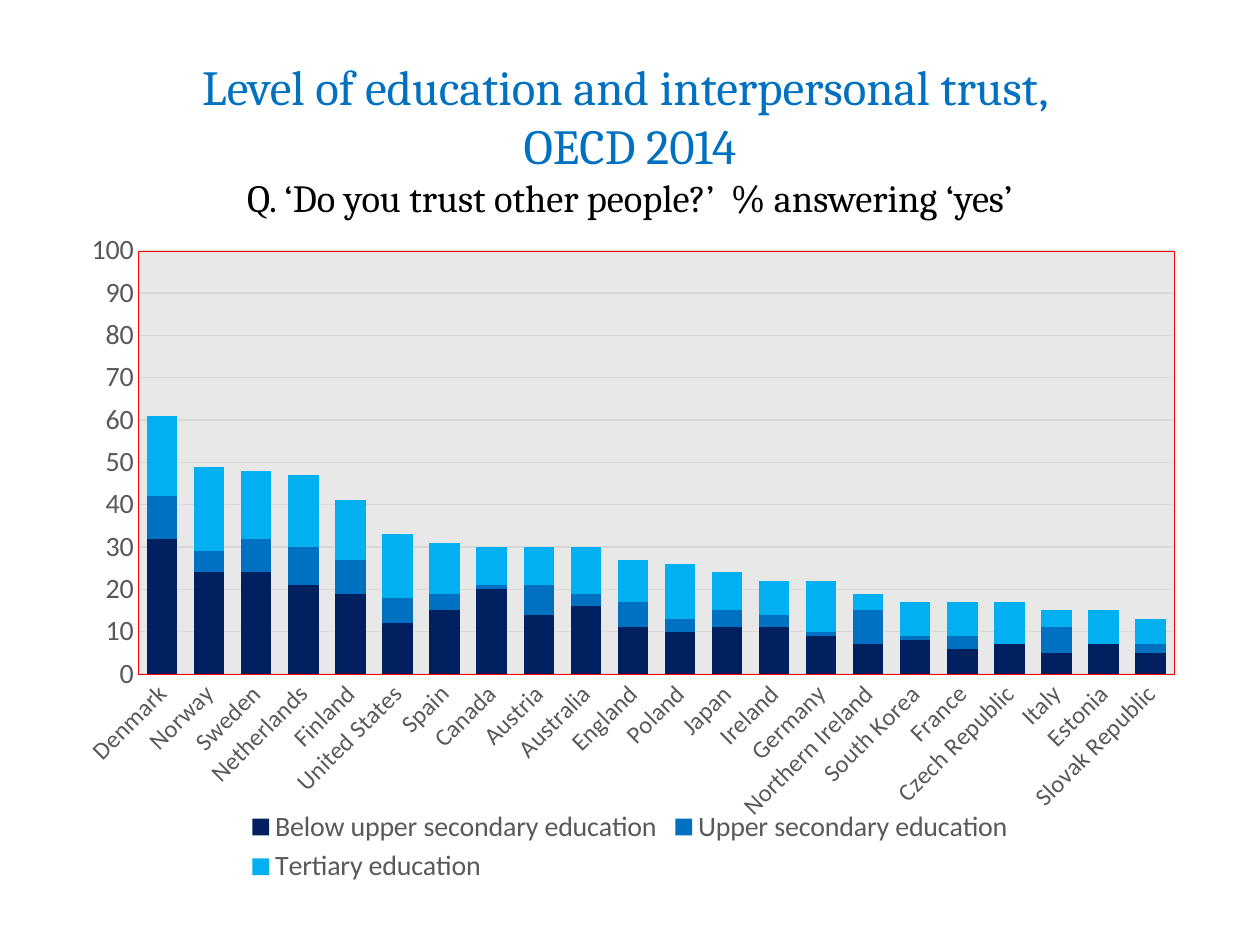
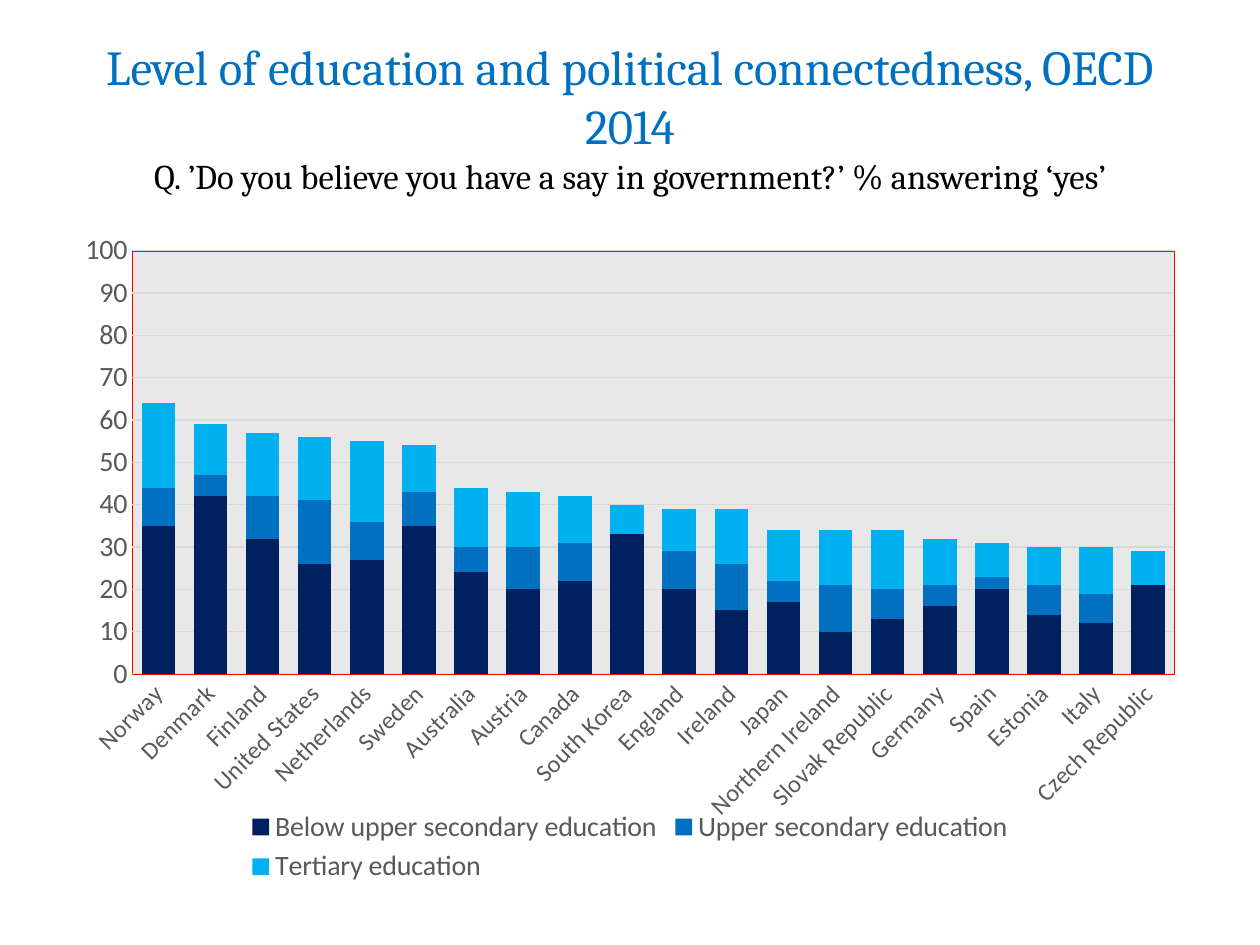
from lxml import etree
from pptx import Presentation
from pptx.chart.data import CategoryChartData
from pptx.dml.color import RGBColor
from pptx.enum import chart as charts, text
from pptx.oxml import parse_xml
from pptx.oxml.ns import nsdecls, qn
from pptx.util import Inches, Pt

TITLE_FONT, CHART_FONT = "Cambria", "Calibri"
TITLE_COLOR, QUESTION_COLOR = "0070C0", "000000"
LABEL_COLOR, GRID_COLOR, BORDER_COLOR = "595959", "D9D9D9", "FF0000"

EDUCATION_LEVELS = [
    ("Below upper secondary education", "002060"),
    ("Upper secondary education", "0070C0"),
    ("Tertiary education", "00B0F0"),
]

# Each row holds a country and one value per education level.
TRUST = [
    ("Denmark", 32, 10, 19), ("Norway", 24, 5, 20), ("Sweden", 24, 8, 16),
    ("Netherlands", 21, 9, 17), ("Finland", 19, 8, 14),
    ("United States", 12, 6, 15), ("Spain", 15, 4, 12), ("Canada", 20, 1, 9),
    ("Austria", 14, 7, 9), ("Australia", 16, 3, 11), ("England", 11, 6, 10),
    ("Poland", 10, 3, 13), ("Japan", 11, 4, 9), ("Ireland", 11, 3, 8),
    ("Germany", 9, 1, 12), ("Northern Ireland", 7, 8, 4),
    ("South Korea", 8, 1, 8), ("France", 6, 3, 8),
    ("Czech Republic", 7, None, 10), ("Italy", 5, 6, 4),
    ("Estonia", 7, 0, 8), ("Slovak Republic", 5, 2, 6),
]
CONNECTEDNESS = [
    ("Norway", 35, 9, 20), ("Denmark", 42, 5, 12), ("Finland", 32, 10, 15),
    ("United States", 26, 15, 15), ("Netherlands", 27, 9, 19),
    ("Sweden", 35, 8, 11), ("Australia", 24, 6, 14), ("Austria", 20, 10, 13),
    ("Canada", 22, 9, 11), ("South Korea", 33, None, 7),
    ("England", 20, 9, 10), ("Ireland", 15, 11, 13), ("Japan", 17, 5, 12),
    ("Northern Ireland", 10, 11, 13), ("Slovak Republic", 13, 7, 14),
    ("Germany", 16, 5, 11), ("Spain", 20, 3, 8), ("Estonia", 14, 7, 9),
    ("Italy", 12, 7, 11), ("Czech Republic", 21, None, 8),
]

SLIDES = [
    {
        "title": ["Level of education and interpersonal trust, ", "OECD 2014"],
        "question": "Q. ‘Do you trust other people?’  % answering ‘yes’",
        "title_size": 28, "question_size": 22, "title_height": 1.6,
        "rows": TRUST, "plot_left": 1.1,
    },
    {
        "title": ["Level of education and political connectedness, OECD 2014"],
        "question": "Q. ’Do you believe you have a say in government?’ % answering ‘yes’",
        "title_size": 27.9, "question_size": 19.8, "title_height": 1.25,
        "rows": CONNECTEDNESS, "plot_left": 1.05,
    },
]

LEFT, WIDTH = 0.5, 9
TITLE_TOP = 0.3
CHART_TOP, CHART_HEIGHT = 1.75, 5.31
PLOT_TOP, PLOT_RIGHT, PLOT_BOTTOM = 1.99, 9.32, 5.35


def rgb(color):
    return RGBColor.from_string(color)


def style_font(font, name, size, color):
    font.name, font.size = name, Pt(size)
    font.color.rgb = rgb(color)


def add_title(slide, content):
    box = slide.shapes.add_textbox(Inches(LEFT), Inches(TITLE_TOP),
                                   Inches(WIDTH), Inches(content["title_height"]))
    frame = box.text_frame
    frame.word_wrap = True
    frame.vertical_anchor = text.MSO_ANCHOR.MIDDLE
    paragraph = frame.paragraphs[0]
    paragraph.alignment = text.PP_ALIGN.CENTER
    lines = [(line, content["title_size"], TITLE_COLOR) for line in content["title"]]
    lines.append((content["question"], content["question_size"], QUESTION_COLOR))
    for index, (line, size, color) in enumerate(lines):
        if index:
            paragraph.add_line_break()
        run = paragraph.add_run()
        run.text = line
        style_font(run.font, TITLE_FONT, size, color)


def format_plot_area(chart, plot_left):
    """Place the inner plot area and give it a translucent fill and a border."""
    plot_area = chart._chartSpace.chart.plotArea
    for layout in plot_area.findall(qn("c:layout")):
        plot_area.remove(layout)
    layout = parse_xml(f"<c:layout {nsdecls('c')}><c:manualLayout/></c:layout>")
    settings = {
        "layoutTarget": "inner", "xMode": "edge", "yMode": "edge",
        "x": (plot_left - LEFT) / WIDTH,
        "y": (PLOT_TOP - CHART_TOP) / CHART_HEIGHT,
        "w": (PLOT_RIGHT - plot_left) / WIDTH,
        "h": (PLOT_BOTTOM - PLOT_TOP) / CHART_HEIGHT,
    }
    for name, value in settings.items():
        etree.SubElement(layout[0], qn(f"c:{name}")).set("val", str(value))
    plot_area.insert(0, layout)
    plot_area.append(parse_xml(
        f'<c:spPr {nsdecls("c", "a")}>'
        f'<a:solidFill><a:srgbClr val="{GRID_COLOR}"><a:alpha val="60000"/></a:srgbClr></a:solidFill>'
        f'<a:ln w="3175"><a:solidFill><a:srgbClr val="{BORDER_COLOR}"/></a:solidFill></a:ln>'
        '</c:spPr>'))


def format_axes(chart):
    countries, percent = chart.category_axis, chart.value_axis
    for axis, size in ((countries, 14), (percent, 16)):
        axis.major_tick_mark = axis.minor_tick_mark = charts.XL_TICK_MARK.NONE
        style_font(axis.tick_labels.font, CHART_FONT, size, LABEL_COLOR)
    countries.format.line.width = Pt(0.25)
    countries.format.line.color.rgb = rgb(BORDER_COLOR)
    label_body = countries._element.find(qn("c:txPr")).find(qn("a:bodyPr"))
    label_body.set("rot", str(-45 * 60000))
    percent.minimum_scale, percent.maximum_scale, percent.major_unit = 0, 100, 10
    percent.format.line.fill.background()
    percent.has_major_gridlines = True
    gridline = percent.major_gridlines.format.line
    gridline.width = Pt(0.75)
    gridline.color.rgb = rgb(GRID_COLOR)


def add_education_chart(slide, content):
    countries, *level_values = zip(*content["rows"])
    data = CategoryChartData()
    data.categories = countries
    for (level, _), values in zip(EDUCATION_LEVELS, level_values):
        data.add_series(level, values)
    chart = slide.shapes.add_chart(
        charts.XL_CHART_TYPE.COLUMN_STACKED, Inches(LEFT), Inches(CHART_TOP),
        Inches(WIDTH), Inches(CHART_HEIGHT), data).chart
    chart.has_title = False
    style_font(chart.font, CHART_FONT, 10, "000000")
    plot = chart.plots[0]
    plot.gap_width, plot.overlap, plot.vary_by_categories = 55, 100, False
    for series, (_, color) in zip(plot.series, EDUCATION_LEVELS):
        series.format.fill.solid()
        series.format.fill.fore_color.rgb = rgb(color)
    format_axes(chart)
    format_plot_area(chart, content["plot_left"])
    chart.has_legend = True
    chart.legend.position = charts.XL_LEGEND_POSITION.BOTTOM
    chart.legend.include_in_layout = False
    style_font(chart.legend.font, CHART_FONT, 16, LABEL_COLOR)


def main():
    presentation = Presentation()
    presentation.slide_width, presentation.slide_height = Inches(10), Inches(7.5)
    for content in SLIDES:
        slide = presentation.slides.add_slide(presentation.slide_layouts[6])
        add_title(slide, content)
        add_education_chart(slide, content)
    presentation.save("out.pptx")


if __name__ == "__main__":
    main()
